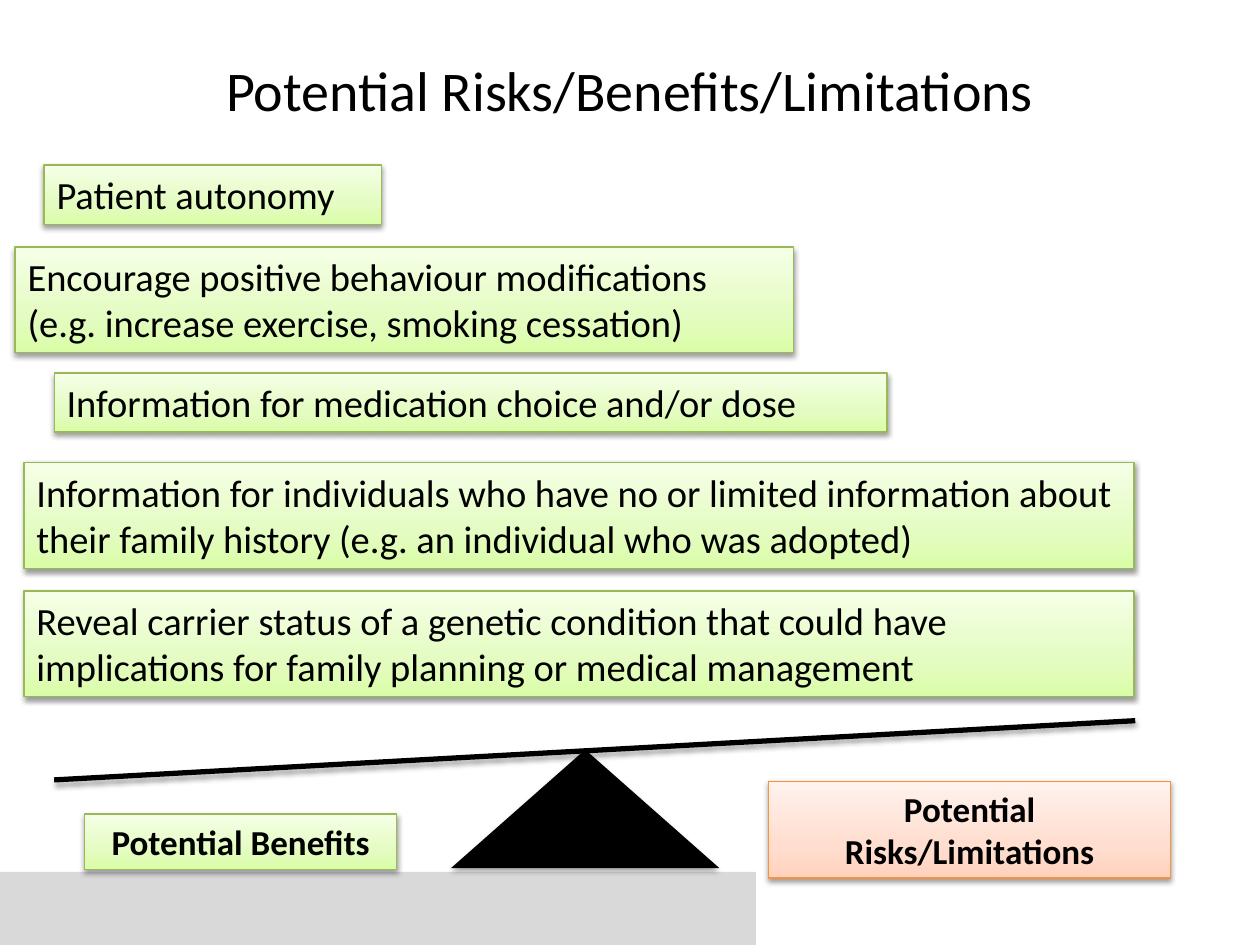
from lxml.etree import SubElement as Sub
from copy import deepcopy
from pptx import Presentation
from pptx.dml.color import RGBColor
from pptx.enum.shapes import MSO_CONNECTOR as Link, MSO_SHAPE as Kind
from pptx.enum.text import MSO_ANCHOR as Anchor, MSO_AUTO_SIZE as Auto, PP_ALIGN as Align
from pptx.oxml.ns import qn
from pptx.util import Inches, Pt

BLACK = RGBColor(0, 0, 0)
GREY = RGBColor(0xD9, 0xD9, 0xD9)
GREEN = RGBColor(0x98, 0xB9, 0x55)
ORANGE = RGBColor(0xF6, 0x92, 0x40)
LIMES = [RGBColor(0xDA, 0xFD, 0xA7), RGBColor(0xE4, 0xFC, 0xC2), RGBColor(0xF5, 0xFF, 0xE7)]
PEACHES = [RGBColor(0xFF, 0xD2, 0xBD), RGBColor(0xFF, 0xDE, 0xD0), RGBColor(0xFF, 0xF2, 0xED)]

deck = Presentation()
deck.slide_width, deck.slide_height = Inches(10), Inches(7.5)
COL, ROW = deck.slide_width / 100, deck.slide_height / 75
slide = deck.slides.add_slide(deck.slide_layouts[6])
shapes = slide.shapes


def grid(x, y, w, h):
    return int(x * COL), int(y * ROW), int(w * COL), int(h * ROW)


def shade(item, drop, alpha):
    props = item._element.spPr
    for old in props.findall(qn("a:effectLst")):
        props.remove(old)
    cast = Sub(Sub(props, qn("a:effectLst")), qn("a:outerShdw"), blurRad="40000",
               dist=str(drop), dir="5400000", rotWithShape="0")
    tone = Sub(cast, qn("a:srgbClr"), val=str(BLACK))
    Sub(tone, qn("a:alpha"), val=str(alpha * 1000))


floor = shapes.add_shape(Kind.RECTANGLE, *grid(0, 69.2, 60, 5.8))
wedge = shapes.add_shape(Kind.ISOSCELES_TRIANGLE, *grid(35.8, 59.5, 21.3, 9.4))
for item, tint in (floor, GREY), (wedge, BLACK):
    item.fill.solid()
    item.fill.fore_color.rgb = tint
    item.line.fill.background()
    item.shadow.inherit = False
shade(wedge, 23000, 35)

beam = shapes.add_connector(Link.STRAIGHT, *grid(4.3, 61.9, 90.1, 57.2))
beam.line.color.rgb = BLACK
beam.line.width = Pt(3)
shade(beam, 23000, 35)

note = dict(size=Pt(22), bold=False)
label = dict(size=Pt(20), bold=True)
lime, peach = (LIMES, GREEN), (PEACHES, ORANGE)
cards = [
    ("Potential Benefits", (6.7, 64.6, 24.8, 4.4), label, Align.CENTER, lime),
    ("Information for medication choice and/or dose",
     (4.3, 29.6, 66.1, 4.7), note, Align.LEFT, lime),
    ("Encourage positive behaviour modifications (e.g. increase exercise, smoking cessation)",
     (1.2, 19.6, 61.8, 8.4), note, Align.LEFT, lime),
    ("Information for individuals who have no or limited information about "
     "their family history (e.g. an individual who was adopted)",
     (1.9, 36.7, 88.1, 8.4), note, Align.LEFT, lime),
    ("Reveal carrier status of a genetic condition that could have "
     "implications for family planning or medical management",
     (1.9, 46.9, 88.1, 8.4), note, Align.LEFT, lime),
    ("Potential Risks/Limitations", (61, 62, 31.9, 7.7), label, Align.CENTER, peach),
    ("Patient autonomy", (3.5, 13.1, 26.8, 4.7), note, Align.LEFT, lime),
    ("Potential Risks/Benefits/Limitations", (5, 0.8, 90, 12.5),
     dict(size=Pt(32), bold=False), Align.CENTER, None),
]

for text, spot, style, align, paint in cards:
    if paint:
        box = shapes.add_shape(Kind.RECTANGLE, *grid(*spot))
        tints, edge = paint
        box.fill.gradient()
        box.fill.gradient_angle = 90
        stops = box._element.spPr.find(".//" + qn("a:gsLst"))
        stops.insert(1, deepcopy(stops[0]))
        for stop, tint, place in zip(box.fill.gradient_stops, tints, (0, 0.35, 1)):
            stop.color.rgb = tint
            stop.position = place
        box.line.color.rgb = edge
        box.line.width = Pt(0.75)
        shade(box, 20000, 38)
    else:
        box = shapes.add_textbox(*grid(*spot))
    frame = box.text_frame
    frame.word_wrap = True
    frame.auto_size = Auto.SHAPE_TO_FIT_TEXT if paint else Auto.NONE
    frame.vertical_anchor = Anchor.TOP if paint else Anchor.MIDDLE
    para = frame.paragraphs[0]
    para.alignment = align
    run = para.add_run()
    run.text = text
    run.font.name = "Calibri"
    run.font.color.rgb = BLACK
    for key, value in style.items():
        setattr(run.font, key, value)

deck.save("out.pptx")
